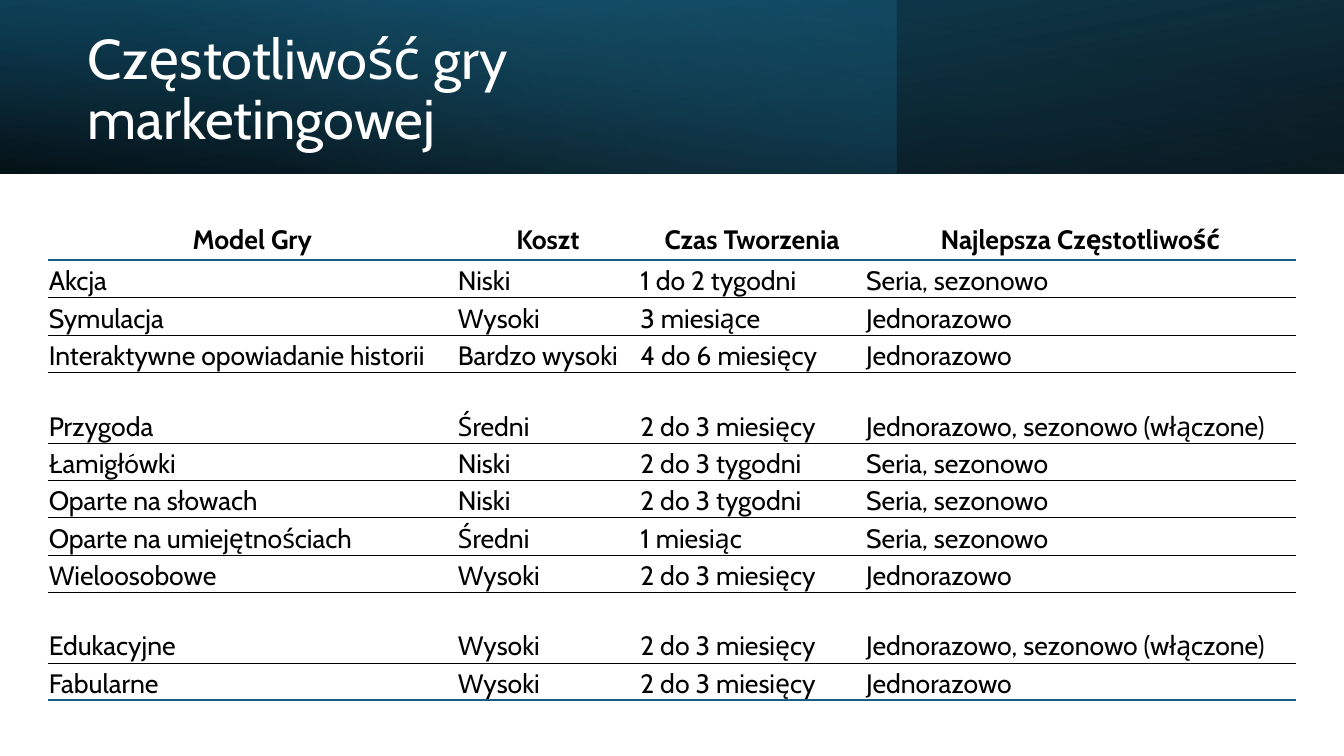
"""Build the slide on how often each marketing game model should run."""
from lxml import etree
from pptx import Presentation
from pptx.dml.color import RGBColor
from pptx.enum.shapes import MSO_SHAPE
from pptx.enum.text import MSO_ANCHOR, PP_ALIGN
from pptx.oxml.ns import qn
from pptx.util import Cm, Pt


def style(p, size, color, bold=False):
    p.font.name = "Cabin"
    p.font.size = Pt(size)
    p.font.bold = bold
    p.font.color.rgb = RGBColor.from_string(color)


def add_color(parent, color, opacity=100):
    clr = etree.SubElement(parent, qn("a:srgbClr"), val=color)
    if opacity < 100:
        etree.SubElement(clr, qn("a:alpha"), val=str(opacity * 1000))


prs = Presentation()
prs.slide_width, prs.slide_height = Cm(33.87), Cm(19.05)
s = prs.slides.add_slide(prs.slide_layouts[6])

bands = [
    (33.87, 180, True, 100, [(0, "000000", 96), (100, "104862", 100)]),
    (22.58, 0, False, 140, [(0, "156082", 41), (74, "46B1E1", 0)]),
    (33.87, 0, True, 260, [(0, "000000", 63), (78, "156082", 15)]),
]
for width, rotation, flipped, angle, stops in bands:
    sp = s.shapes.add_shape(MSO_SHAPE.RECTANGLE, 0, 0, Cm(width), Cm(4.38))
    sp.shadow.inherit = False
    sp.line.fill.background()
    sp.rotation = rotation
    spPr = sp._element.spPr
    if flipped:
        spPr.find(qn("a:xfrm")).set("flipH", "1")
    grad = etree.Element(qn("a:gradFill"), rotWithShape="1")
    gsLst = etree.SubElement(grad, qn("a:gsLst"))
    for pos, color, opacity in stops:
        add_color(etree.SubElement(gsLst, qn("a:gs"), pos=str(pos * 1000)), color, opacity)
    etree.SubElement(grad, qn("a:lin"), ang=str(angle * 60000), scaled="0")
    spPr.find(qn("a:prstGeom")).addnext(grad)

title = s.shapes.add_textbox(Cm(1.96), Cm(0.69), Cm(19.6), Cm(3.23))
tf = title.text_frame
tf.word_wrap = True
tf.vertical_anchor = MSO_ANCHOR.MIDDLE
p = tf.paragraphs[0]
p.text = "Częstotliwość gry marketingowej"
p.line_spacing = 0.9
style(p, 40, "FFFFFF")

rows = [
    ("Model Gry", "Koszt", "Czas Tworzenia", "Najlepsza Częstotliwość"),
    ("Akcja", "Niski", "1 do 2 tygodni", "Seria, sezonowo"),
    ("Symulacja", "Wysoki", "3 miesiące", "Jednorazowo"),
    ("Interaktywne opowiadanie historii", "Bardzo wysoki", "4 do 6 miesięcy", "Jednorazowo"),
    ("Przygoda", "Średni", "2 do 3 miesięcy", "Jednorazowo, sezonowo (włączone)"),
    ("Łamigłówki", "Niski", "2 do 3 tygodni", "Seria, sezonowo"),
    ("Oparte na słowach", "Niski", "2 do 3 tygodni", "Seria, sezonowo"),
    ("Oparte na umiejętnościach", "Średni", "1 miesiąc", "Seria, sezonowo"),
    ("Wieloosobowe", "Wysoki", "2 do 3 miesięcy", "Jednorazowo"),
    ("Edukacyjne", "Wysoki", "2 do 3 miesięcy", "Jednorazowo, sezonowo (włączone)"),
    ("Fabularne", "Wysoki", "2 do 3 miesięcy", "Jednorazowo"),
]
col_widths = [10.31, 4.6, 5.69, 10.85]
tall_rows = ("Przygoda", "Edukacyjne")
rules = [("156082", 1.5)] + [("000000", 0.25)] * (len(rows) - 2) + [("156082", 1)]

frame = s.shapes.add_table(len(rows), len(col_widths), Cm(1.2), Cm(5.62), Cm(31.45), Cm(12.02))
table = frame.table
table.first_row = table.horz_banding = False
table._tbl.tblPr.find(qn("a:tableStyleId")).text = "{2D5ABB26-0587-4C30-8999-92F81FD0307C}"
for column, width in zip(table.columns, col_widths):
    column.width = Cm(width)

for i, texts in enumerate(rows):
    table.rows[i].height = Cm(1.78 if texts[0] in tall_rows else 0.94)
    borders = [("a:lnB", rules[i])]
    if i:
        borders.insert(0, ("a:lnT", rules[i - 1]))
    for j, text in enumerate(texts):
        cell = table.cell(i, j)
        cell.fill.background()
        cell.margin_left = cell.margin_right = cell.margin_top = Cm(0.03)
        cell.margin_bottom = 0
        cell.vertical_anchor = MSO_ANCHOR.BOTTOM if i else MSO_ANCHOR.TOP
        p = cell.text_frame.paragraphs[0]
        p.text = text
        p.alignment = PP_ALIGN.LEFT if i else PP_ALIGN.CENTER
        style(p, 19, "000000", bold=i == 0)
        tcPr = cell._tc.get_or_add_tcPr()
        for k, (tag, (color, width)) in enumerate(borders):
            ln = etree.Element(qn(tag), w=str(Pt(width)))
            add_color(etree.SubElement(ln, qn("a:solidFill")), color)
            tcPr.insert(k, ln)

prs.save("out.pptx")
